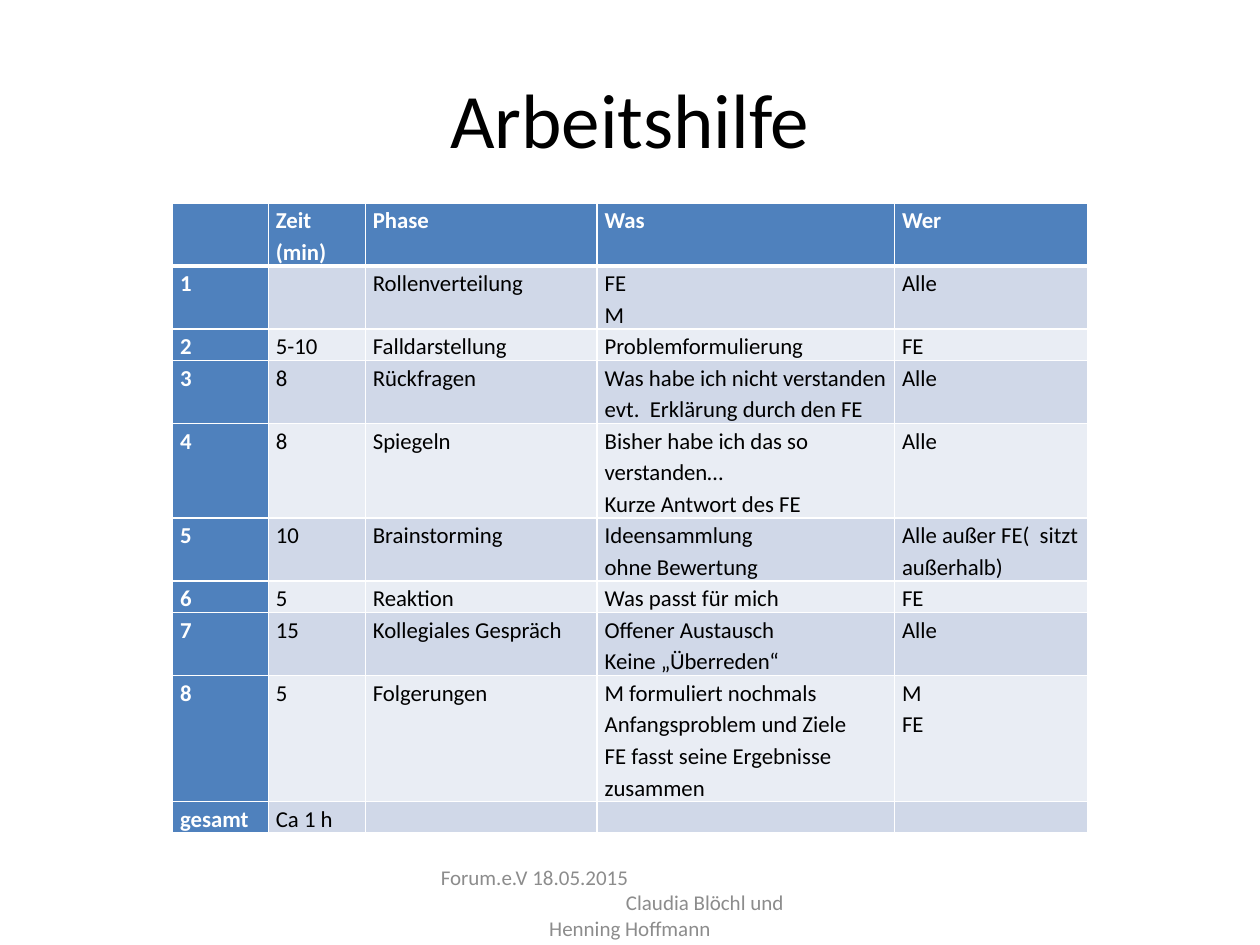
from lxml import etree
from pptx import Presentation
from pptx.dml.color import RGBColor
from pptx.enum.text import MSO_ANCHOR, PP_ALIGN
from pptx.oxml.ns import qn
from pptx.util import Inches, Pt

LEFT, MID = PP_ALIGN.LEFT, PP_ALIGN.CENTER
TOP, CENTRE = MSO_ANCHOR.TOP, MSO_ANCHOR.MIDDLE
WIDE, HIGH = 10, 7.5
BLUE, DARK, PALE = "4F81BD", "D0D8E8", "E9EDF4"
WHITE, BLACK, GREY = "FFFFFF", "000000", "8C8C8C"
LINE = 0.25  # height of one text line in the table
COLS = [0.76, 0.77, 1.84, 2.36, 1.53]

# Lines in each row, then its cells; a line feed starts a new paragraph
ROWS = [
    (2, ["", "Zeit\n(min)", "Phase", "Was", "Wer"]),
    (2, ["1", "", "Rollenverteilung", "FE\nM", "Alle"]),
    (1, ["2", "5-10", "Falldarstellung", "Problemformulierung", "FE"]),
    (2, ["3", "8", "Rückfragen",
         "Was habe ich nicht verstanden\nevt.  Erklärung durch den FE", "Alle"]),
    (3, ["4", "8", "Spiegeln",
         "Bisher habe ich das so verstanden…\nKurze Antwort des FE", "Alle"]),
    (2, ["5", "10", "Brainstorming", "Ideensammlung\nohne Bewertung",
         "Alle außer FE(  sitzt außerhalb)"]),
    (1, ["6", "5", "Reaktion", "Was passt für mich", "FE"]),
    (2, ["7", "15", "Kollegiales Gespräch",
         "Offener Austausch\nKeine „Überreden“", "Alle"]),
    (4, ["8", "5", "Folgerungen",
         "M formuliert nochmals Anfangsproblem und Ziele\n"
         "FE fasst seine Ergebnisse zusammen", "M\nFE"]),
    (1, ["gesamt", "Ca 1 h", "", "", ""]),
]


def paint(code):
    return RGBColor.from_string(code)


def write(frame, text, size=13, color=BLACK, bold=False, aligns=(LEFT,),
          space=1.0):
    """Fill a frame; the last alignment holds for all further paragraphs."""
    frame.word_wrap = True
    for i, part in enumerate(text.split("\n")):
        para = frame.add_paragraph() if i else frame.paragraphs[0]
        para.alignment = aligns[min(i, len(aligns) - 1)]
        para.line_spacing = space
        if not part:  # keeps an empty cell as low as its row
            end = etree.SubElement(para._p, qn("a:endParaRPr"))
            end.set("sz", str(size * 100))
            continue
        run = para.add_run()
        run.text = part
        font = run.font
        font.name, font.size, font.bold = "Calibri", Pt(size), bold
        font.color.rgb = paint(color)


def add_box(slide, text, x, y, w, h, **form):
    """Place a text box by shares of the slide's size."""
    box = slide.shapes.add_textbox(Inches(x * WIDE), Inches(y * HIGH),
                                   Inches(w * WIDE), Inches(h * HIGH))
    box.text_frame.vertical_anchor = CENTRE
    write(box.text_frame, text, **form)
    return box


def edge(cell, row):
    """White cell borders, thick between head and body."""
    thick = {(0, "B"), (1, "T")}
    for side in "LRTB":
        width = Pt(3 if (row, side) in thick else 1)
        line = etree.SubElement(cell._tc.get_or_add_tcPr(),
                                qn("a:ln" + side), w=str(width))
        fill = etree.SubElement(line, qn("a:solidFill"))
        etree.SubElement(fill, qn("a:srgbClr"), val=WHITE)


def add_grid(slide, x, y):
    high = LINE * sum(count for count, _ in ROWS)
    grid = slide.shapes.add_table(
        len(ROWS), len(COLS), Inches(x), Inches(y),
        Inches(sum(COLS)), Inches(high)).table
    grid.horz_banding = False
    for col, width in zip(grid.columns, COLS):
        col.width = Inches(width)
    for r, (count, texts) in enumerate(ROWS):
        grid.rows[r].height = Inches(LINE * count)
        for c, text in enumerate(texts):
            cell = grid.cell(r, c)
            cell.margin_left = cell.margin_right = Inches(0.06)
            cell.margin_top = cell.margin_bottom = 0
            cell.vertical_anchor = TOP
            head = r == 0 or c == 0
            edge(cell, r)
            cell.fill.solid()
            cell.fill.fore_color.rgb = paint(
                BLUE if head else DARK if r % 2 else PALE)
            write(cell.text_frame, text, bold=head, space=1.15,
                  color=WHITE if head else BLACK)


def main():
    deck = Presentation()
    deck.slide_width, deck.slide_height = Inches(WIDE), Inches(HIGH)
    slide = deck.slides.add_slide(deck.slide_layouts[6])

    # Title
    add_box(slide, "Arbeitshilfe", 0.05, 0.04, 0.9, 0.17, size=44,
            aligns=(MID,))

    # Schedule
    add_grid(slide, 1.37, 1.61)

    # Footer, its second line set in from the left
    foot = add_box(slide, "Forum.e.V 18.05.2015\nClaudia Blöchl und\n"
                   "Henning Hoffmann", 0.34, 0.93, 0.32, 0.05, size=12,
                   color=GREY, aligns=(LEFT, LEFT, MID))
    second = foot.text_frame.paragraphs[1]
    second._p.get_or_add_pPr().set("marL", str(Inches(1.47)))

    deck.save("out.pptx")


if __name__ == "__main__":
    main()
